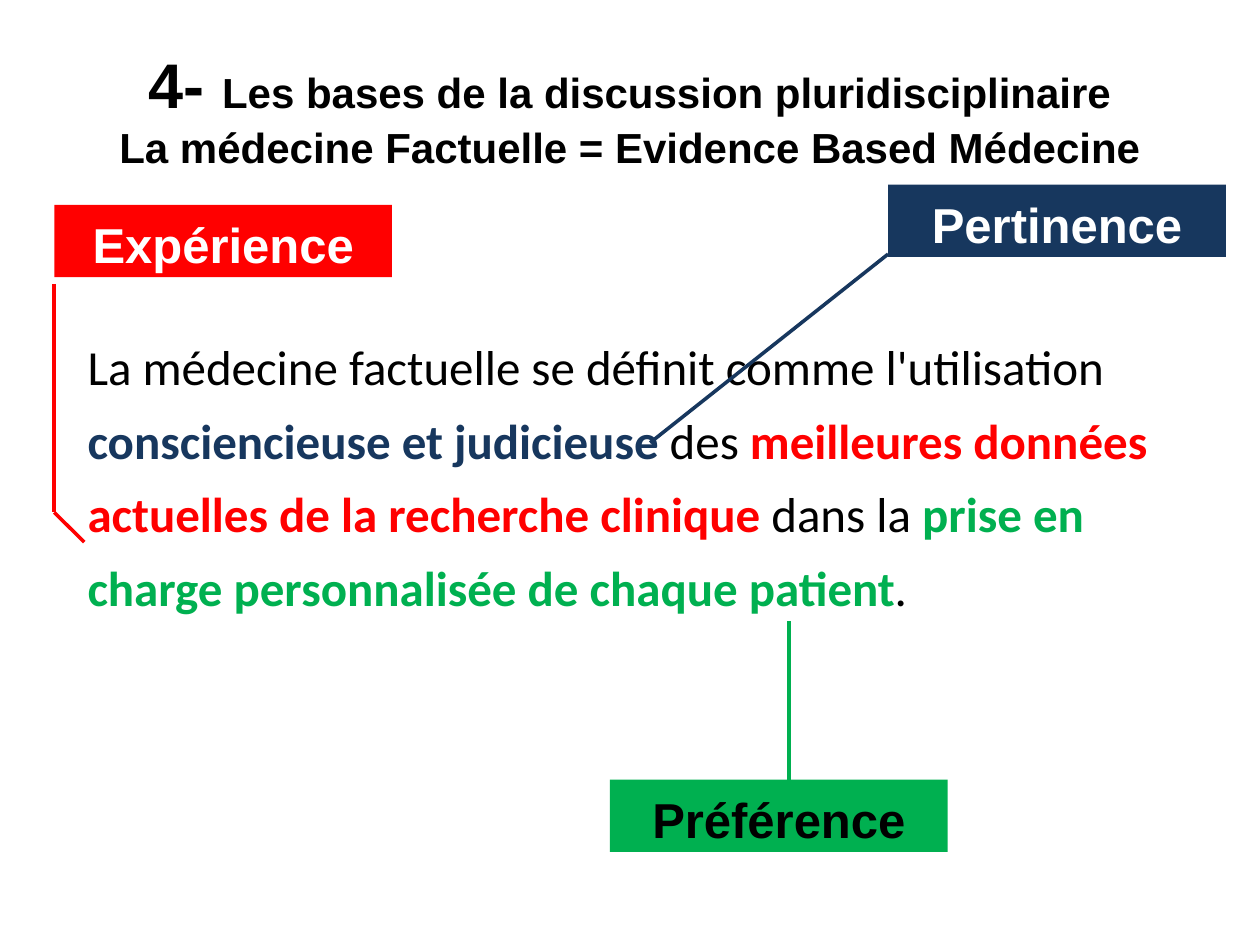
"""Build the slide on the bases of evidence based medicine."""
from lxml import etree
from pptx import Presentation
from pptx.dml.color import RGBColor
from pptx.enum.shapes import MSO_CONNECTOR, MSO_SHAPE
from pptx.enum.text import MSO_ANCHOR, PP_ALIGN
from pptx.oxml.ns import qn
from pptx.util import Pt

STRAIGHT = MSO_CONNECTOR.STRAIGHT
RECT = MSO_SHAPE.RECTANGLE
TOP = MSO_ANCHOR.TOP
LEFT, MID = PP_ALIGN.LEFT, PP_ALIGN.CENTER

THEME = {
    "black": "000000", "white": "FFFFFF", "red": "FF0000",
    "navy": "17375E", "green": "00B050",
    "head": "Arial", "body": "Calibri",
    "number": 36, "title": 24, "text": 28, "line": 2.04,
}

# each run: text, size, colour, bold
TITLE = [
    [("4- ", "number", "black", True),
     ("Les bases de la discussion pluridisciplinaire", "title", "black", True)],
    [("La médecine Factuelle = Evidence Based Médecine", "title", "black", True)],
]
BODY = [[
    ("La médecine factuelle se définit comme l'utilisation ", "text", "black", False),
    ("consciencieuse et judicieuse ", "text", "navy", True),
    ("des ", "text", "black", False),
    ("meilleures données actuelles de la recherche clinique ", "text", "red", True),
    ("dans la ", "text", "black", False),
    ("prise en charge personnalisée de chaque patient", "text", "green", True),
    (".", "text", "black", False),
]]
LABELS = [
    ("Expérience", 31, 117, "red", "white"),
    ("Pertinence", 507.5, 105.5, "navy", "white"),
    ("Préférence", 348.5, 445.5, "green", "black"),
]
LABEL_W, LABEL_H = 193, 41.3
LINES = [
    ("red", [(31, 162.3), (31, 292.8), (48.2, 309.8)]),
    ("navy", [(371.5, 253), (507.5, 145.2)]),
    ("green", [(450.8, 355), (450.8, 445.5)]),
]
""" """


def color(name):
    """Return the theme colour."""
    return RGBColor.from_string(THEME[name])


def fill_text(shape, paras, font, align, space, top):
    """Write paragraphs of styled runs into a shape."""
    frame = shape.text_frame
    frame.word_wrap = True
    frame.vertical_anchor = TOP
    frame.margin_left = frame.margin_right = frame.margin_bottom = 0
    frame.margin_top = Pt(top)
    for i, runs in enumerate(paras):
        para = frame.add_paragraph() if i else frame.paragraphs[0]
        para.alignment = align
        para.line_spacing = space
        for text, size, tint, bold in runs:
            run = para.add_run()
            run.text = text
            run.font.name = THEME[font]
            run.font.size = Pt(THEME[size])
            run.font.bold = bold
            run.font.color.rgb = color(tint)


def add_text(slide, box, *style):
    """Add a text box."""
    fill_text(slide.shapes.add_textbox(*map(Pt, box)), *style)


def add_label(slide, text, left, top, fill, tint):
    """Add a filled label."""
    box = map(Pt, (left, top, LABEL_W, LABEL_H))
    shape = slide.shapes.add_shape(RECT, *box)
    shape.shadow.inherit = False
    shape.fill.solid()
    shape.fill.fore_color.rgb = color(fill)
    shape.line.fill.background()
    fill_text(shape, [[(text, "text", tint, True)]], "head", MID, 1, 5.6)


def add_line(slide, tint, start, end):
    """Add a straight line without shadow."""
    line = slide.shapes.add_connector(STRAIGHT, *map(Pt, start + end))
    line.line.color.rgb = color(tint)
    line.line.width = Pt(THEME["line"])
    etree.SubElement(line._element.spPr, qn("a:effectLst"))


def main():
    """Build and save the slide."""
    deck = Presentation()
    deck.slide_width, deck.slide_height = Pt(720), Pt(540)
    slide = deck.slides.add_slide(deck.slide_layouts[6])
    add_text(slide, (65, 24, 590, 79), TITLE, "head", MID, 1.01, 1.5)
    add_text(slide, (50, 119, 633, 236), BODY, "body", LEFT, 1.25, 65)
    for tint, points in LINES:
        for start, end in zip(points, points[1:]):
            add_line(slide, tint, start, end)
    for label in LABELS:
        add_label(slide, *label)
    deck.save("out.pptx")


if __name__ == "__main__":
    main()
